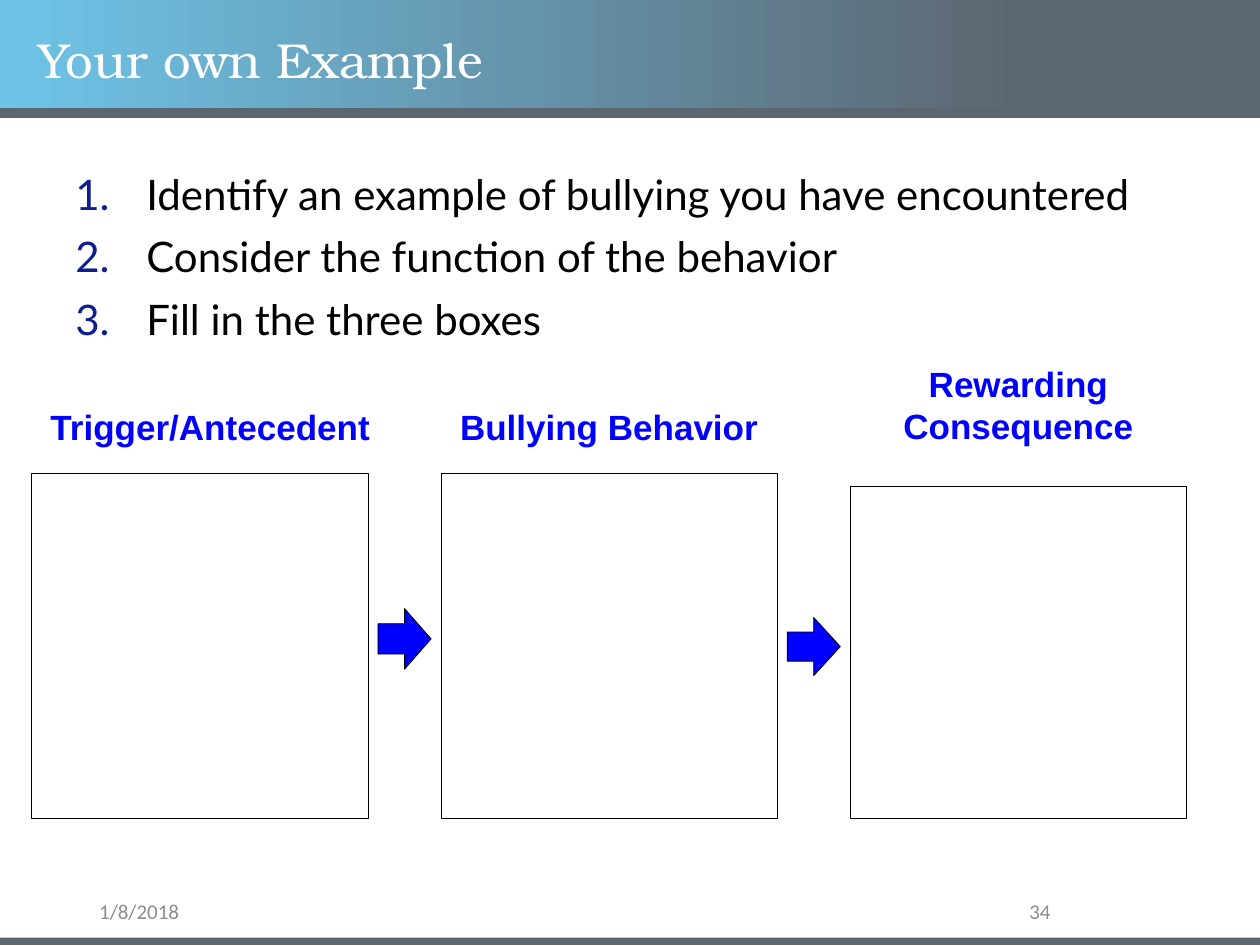
from lxml import etree
from pptx import Presentation
from pptx.dml.color import RGBColor
from pptx.enum.shapes import MSO_SHAPE
from pptx.enum.text import MSO_ANCHOR, MSO_AUTO_SIZE, PP_ALIGN
from pptx.oxml.ns import qn
from pptx.util import Cm, Pt

RECTANGLE, RIGHT_ARROW = MSO_SHAPE.RECTANGLE, MSO_SHAPE.RIGHT_ARROW
TOP, MIDDLE = MSO_ANCHOR.TOP, MSO_ANCHOR.MIDDLE
LEFT, CENTER, RIGHT = PP_ALIGN.LEFT, PP_ALIGN.CENTER, PP_ALIGN.RIGHT
FIT_SHAPE = MSO_AUTO_SIZE.SHAPE_TO_FIT_TEXT

SKY = RGBColor(0x6E, 0xC4, 0xE8)
SLATE = RGBColor(0x5C, 0x66, 0x70)
GRAY = RGBColor(0x8C, 0x8C, 0x8C)
NAVY = RGBColor(0x0D, 0x1E, 0x8E)
BLUE = RGBColor(0x00, 0x00, 0xFF)
BLACK = RGBColor(0x00, 0x00, 0x00)
WHITE = RGBColor(0xFF, 0xFF, 0xFF)

FOOTER_FONT = {"name": "Calibri", "size": Pt(12)}
TITLE_FONT = {"name": "TeX Gyre Bonum", "size": Pt(28)}
STEP_FONT = {"name": "Lato", "size": Pt(24)}
LABEL_FONT = {"name": "Arial", "size": Pt(20), "bold": True}


def add_shape(shapes, kind, bounds, fill, outline=None):
    shape = shapes.add_shape(kind, *map(Cm, bounds))
    shape.shadow.inherit = False
    shape.fill.solid()
    shape.fill.fore_color.rgb = fill
    if outline is None:
        shape.line.fill.background()
    else:
        shape.line.color.rgb = outline
        shape.line.width = Pt(0.5)
    return shape


def add_text(shapes, bounds, lines, font_values, color, align=LEFT, anchor=TOP):
    frame = shapes.add_textbox(*map(Cm, bounds)).text_frame
    frame.word_wrap = True
    frame.vertical_anchor = anchor
    frame.text = "\n".join(lines)
    for paragraph in frame.paragraphs:
        paragraph.alignment = align
        font = paragraph.runs[0].font
        for attribute, value in font_values.items():
            setattr(font, attribute, value)
        font.color.rgb = color
    return frame


deck = Presentation()
deck.slide_width, deck.slide_height = Cm(25.4), Cm(19.05)
slide = deck.slides.add_slide(deck.slide_layouts[6])
shapes = slide.shapes

add_text(shapes, (1.75, 18.08, 5.72, 0.58), ["1/8/2018"], FOOTER_FONT, GRAY, anchor=MIDDLE)

banner = add_shape(shapes, RECTANGLE, (0, 0, 25.4, 2.2), SKY)
banner.fill.gradient()
banner.fill.gradient_angle = 0
for stop, (position, color) in zip(banner.fill.gradient_stops, [(0, SKY), (0.81, SLATE)]):
    stop.position = position
    stop.color.rgb = color
for rule_top in (2.18, 18.9):
    add_shape(shapes, RECTANGLE, (0, rule_top, 25.4, 0.2), SLATE)

add_text(shapes, (17.93, 18.08, 3.5, 0.58), ["34"], FOOTER_FONT, GRAY, RIGHT, MIDDLE)

title = add_text(shapes, (0.53, 0.53, 21.9, 1.45), ["Your own Example"], TITLE_FONT, WHITE, anchor=MIDDLE)
title.paragraphs[0].line_spacing = 0.9

steps = add_text(
    shapes,
    (1.27, 3.38, 22.86, 5.92),
    [
        "Identify an example of bullying you have encountered",
        "Consider the function of the behavior",
        "Fill in the three boxes",
    ],
    STEP_FONT,
    BLACK,
)
for index, step in enumerate(steps.paragraphs):
    properties = step._p.get_or_add_pPr()
    properties.set("marL", str(Cm(1.43)))
    properties.set("indent", str(Cm(-1.43)))
    number_color = etree.SubElement(properties, qn("a:buClr"))
    etree.SubElement(number_color, qn("a:srgbClr"), val=str(NAVY))
    etree.SubElement(properties, qn("a:buAutoNum"), type="arabicPeriod")
    step.line_spacing = 0.9
    step.space_before = Pt(10 if index else 0)

BOX_WIDTH, BOX_BOTTOM, STAGE_STEP = 6.78, 16.51, 8.25
stages = [
    (["Trigger/Antecedent"], 8.05, 7.2, 1.57, 9.55),
    (["Bullying Behavior"], 8.05, BOX_WIDTH, 1.57, 9.55),
    (["Rewarding", "Consequence"], 7.19, BOX_WIDTH, 2.69, 9.8),
]
for index, (label, label_top, label_width, label_height, box_top) in enumerate(stages):
    left = 0.64 + index * STAGE_STEP
    stage = shapes.add_group_shape().shapes
    add_shape(stage, RECTANGLE, (left, box_top, BOX_WIDTH, BOX_BOTTOM - box_top), WHITE, BLACK)
    heading = add_text(stage, (left, label_top, label_width, label_height), label, LABEL_FONT, BLUE, CENTER)
    heading.auto_size = FIT_SHAPE

for index, (arrow_top, arrow_height) in enumerate([(12.27, 1.22), (12.45, 1.17)]):
    arrow_left = 7.62 + index * STAGE_STEP
    add_shape(shapes, RIGHT_ARROW, (arrow_left, arrow_top, 1.07, arrow_height), BLUE, BLACK)

deck.save("out.pptx")
